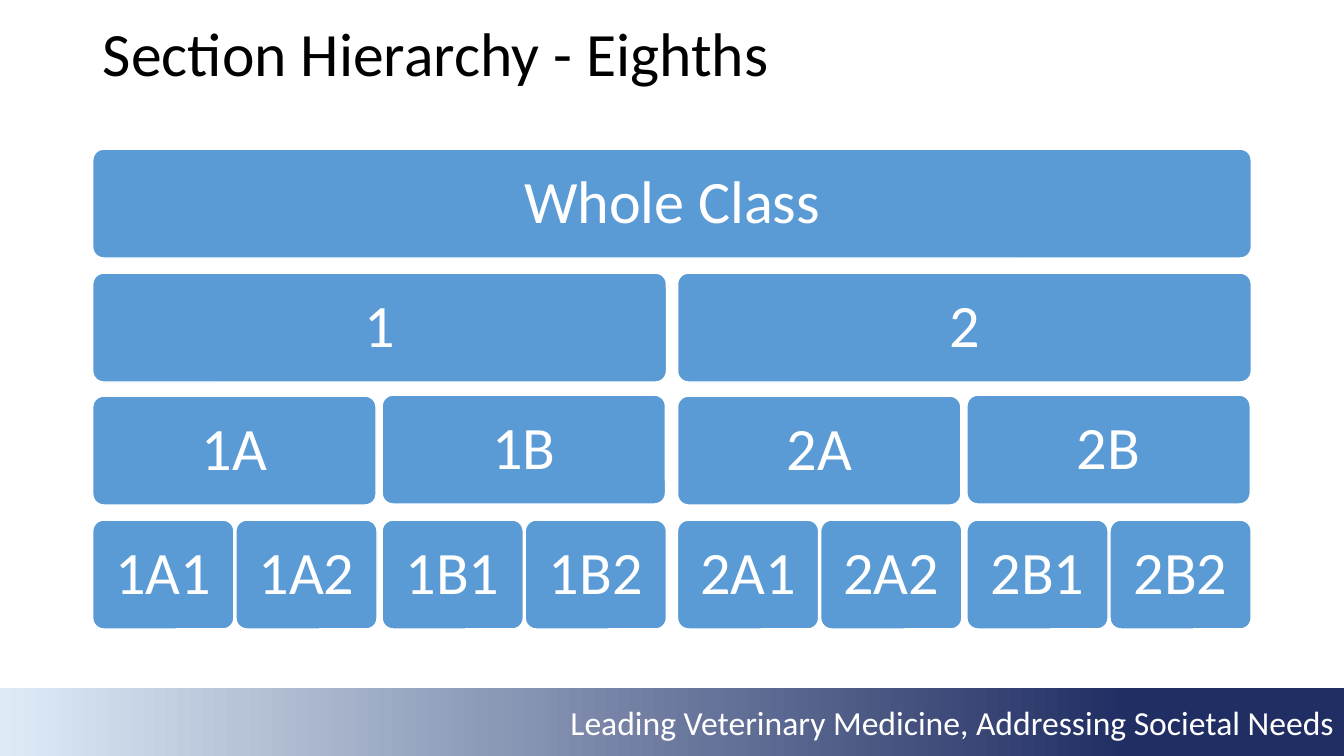
import pptx
import pptx.util
import pptx.dml.color
import pptx.enum.shapes
import pptx.enum.text

PX = 9144  # EMU per px, 100 px to the inch
THEME = {
    "font": "Calibri",
    "black": "000000", "white": "FFFFFF", "box": "5B9BD5",
    "navy": "212E63", "pale": "DEEBF7",
    "title_size": 44, "box_size": 43, "footer_size": 24,
}
SHAPES = pptx.enum.shapes.MSO_SHAPE
ALIGN = pptx.enum.text.PP_ALIGN


def rgb(name):
    return pptx.dml.color.RGBColor.from_string(THEME[name])


def write(sp, text, size, color, align, spacing=None, inset=10):
    tf = sp.text_frame
    tf.word_wrap = True
    tf.auto_size = pptx.enum.text.MSO_AUTO_SIZE.NONE
    tf.vertical_anchor = pptx.enum.text.MSO_ANCHOR.MIDDLE
    tf.margin_left = tf.margin_right = inset * PX
    p = tf.paragraphs[0]
    p.alignment = align
    p.line_spacing = spacing
    r = p.add_run()
    r.text = text
    r.font.name = THEME["font"]
    r.font.size = pptx.util.Pt(THEME[size])
    r.font.color.rgb = rgb(color)


prs = pptx.Presentation()
prs.slide_width, prs.slide_height = 1333 * PX, 750 * PX
s = prs.slides.add_slide(prs.slide_layouts[5])

# Title
title = s.shapes.title
title.left, title.top, title.width, title.height = 92 * PX, 16 * PX, 1150 * PX, 81 * PX
write(title, "Section Hierarchy - Eighths", "title_size", "black", ALIGN.LEFT, spacing=0.9)

# Footer band
band = s.shapes.add_shape(SHAPES.RECTANGLE, 0, 683 * PX, prs.slide_width, 67 * PX)
band.shadow.inherit = False
band.line.fill.background()
band.fill.gradient()
band.fill.gradient_angle = 180
for stop, position, color in zip(band.fill.gradient_stops, (0.16, 1), ("navy", "pale")):
    stop.position = position
    stop.color.rgb = rgb(color)
write(band, "Leading Veterinary Medicine, Addressing Societal Needs",
      "footer_size", "white", ALIGN.RIGHT)

# Hierarchy: each level splits every box of the one above in two
LEFT, HEIGHT = 92, 108
SPLIT_STEPS = (580, 287, 142)
levels = [
    (148, 1149, ["Whole Class"]),
    (271, 569, ["1", "2"]),
    (393, 281, ["1A", "1B", "2A", "2B"]),
    (516, 140, ["1A1", "1A2", "1B1", "1B2", "2A1", "2A2", "2B1", "2B2"]),
]
for depth, (top, width, labels) in enumerate(levels):
    for i, label in enumerate(labels):
        x = LEFT + sum(SPLIT_STEPS[k] * (i >> (depth - 1 - k) & 1) for k in range(depth))
        y = top - 1 if label.endswith("B") else top
        sp = s.shapes.add_shape(SHAPES.ROUNDED_RECTANGLE, x * PX, y * PX, width * PX, HEIGHT * PX)
        sp.adjustments[0] = 0.1
        sp.shadow.inherit = False
        sp.fill.solid()
        sp.fill.fore_color.rgb = rgb("box")
        sp.line.color.rgb = rgb("white")
        sp.line.width = pptx.util.Pt(1)
        write(sp, label, "box_size", "white", ALIGN.CENTER, spacing=0.9, inset=18)

prs.save("out.pptx")
